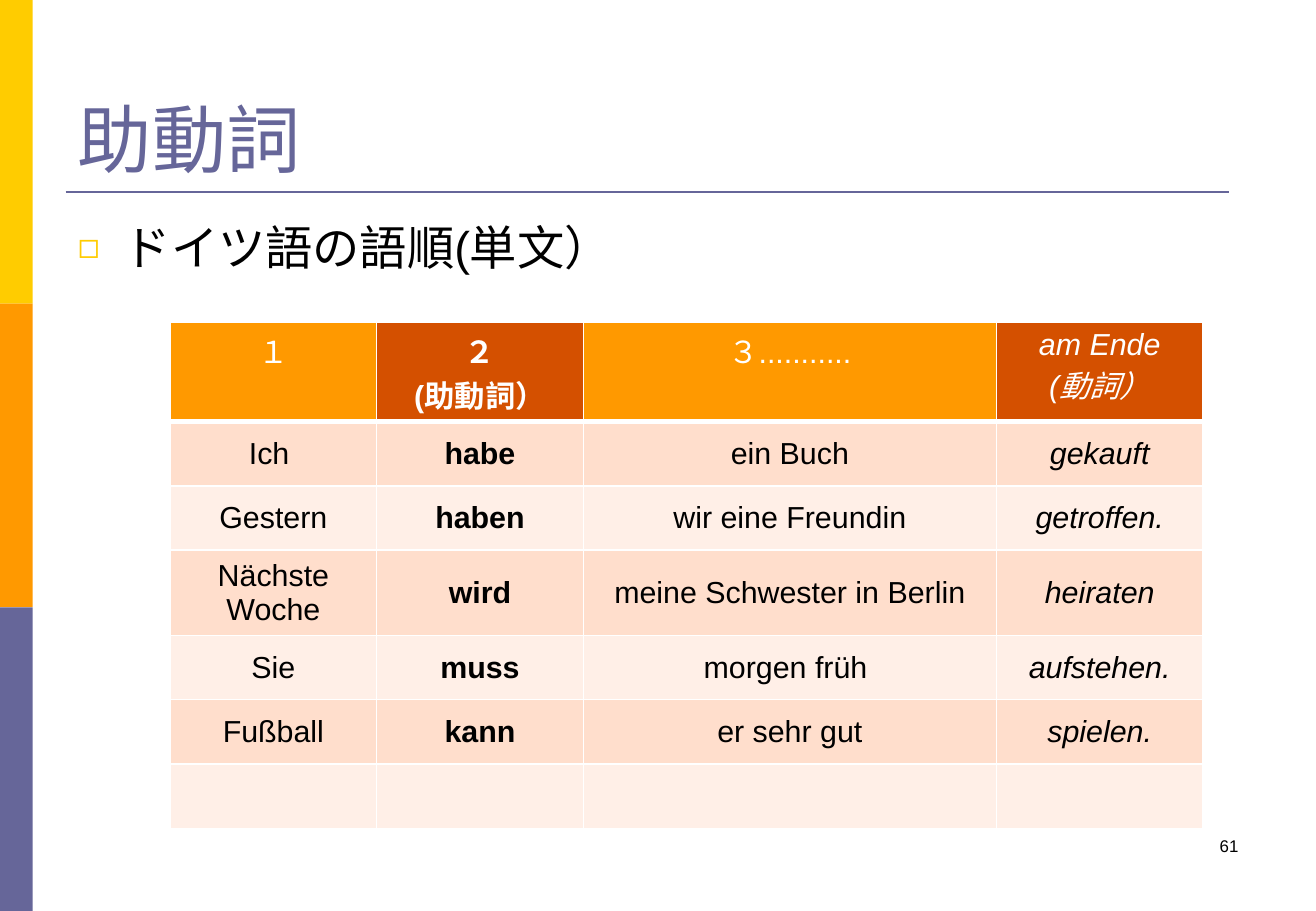
from lxml import etree
from pptx import Presentation
from pptx.dml.color import RGBColor
from pptx.enum.shapes import MSO_CONNECTOR, MSO_SHAPE
from pptx.enum.text import MSO_ANCHOR, MSO_AUTO_SIZE, PP_ALIGN
from pptx.oxml.ns import qn
from pptx.util import Inches, Pt

LEFT, CENTER, RIGHT = PP_ALIGN.LEFT, PP_ALIGN.CENTER, PP_ALIGN.RIGHT
TOP, MIDDLE, BOTTOM = MSO_ANCHOR.TOP, MSO_ANCHOR.MIDDLE, MSO_ANCHOR.BOTTOM
NO_AUTOFIT = MSO_AUTO_SIZE.NONE
RECTANGLE, STRAIGHT = MSO_SHAPE.RECTANGLE, MSO_CONNECTOR.STRAIGHT
FONT = "Arial"
COLORS = {
    "yellow": "FFCC00", "orange": "FF9900", "violet": "666699",
    "verb": "D45000", "band_dark": "FFDECC", "band_light": "FFEFE7",
    "white": "FFFFFF", "black": "000000",
}
HEADER = ["１", "２\n(助動詞）", "３...........", "am Ende\n(動詞）"]
SENTENCES = [
    ["Ich ", "habe", "ein Buch", "gekauft"],
    ["Gestern", "haben", "wir eine Freundin", "getroffen."],
    ["Nächste Woche", "wird", "meine Schwester in Berlin", "heiraten"],
    ["Sie", "muss", "morgen früh ", "aufstehen."],
    ["Fußball", "kann", "er sehr gut", "spielen."],
    ["", "", "", ""],
]
COLUMN_WIDTHS = [1.7, 1.7, 3.4, 1.7]
ROW_HEIGHTS = [0.82, 0.53, 0.53, 0.66, 0.53, 0.53, 0.53]
AUXILIARY, FINAL_VERB = 1, 3


def rgb(name):
    return RGBColor.from_string(COLORS[name])


def write_text(frame, text, size=18, color="black", align=LEFT, anchor=TOP,
               bold=False, italic=False):
    frame.word_wrap = True
    frame.vertical_anchor = anchor
    frame.text = text
    for paragraph in frame.paragraphs:
        paragraph.alignment = align
        for font in [paragraph.font] + [run.font for run in paragraph.runs]:
            font.name, font.size = FONT, Pt(size)
            font.bold, font.italic = bold, italic
            font.color.rgb = rgb(color)


def place(shape, box):
    shape.left, shape.top, shape.width, shape.height = map(Inches, box)


def add_side_bar(slide, box):
    left, top, width, height = box
    names = ["yellow", "orange", "violet"]
    part = height / len(names)
    for index, name in enumerate(names):
        stripe = slide.shapes.add_shape(
            RECTANGLE, Inches(left), Inches(top + index * part),
            Inches(width), Inches(part))
        stripe.shadow.inherit = False
        stripe.fill.solid()
        stripe.fill.fore_color.rgb = rgb(name)
        stripe.line.fill.background()


def add_title(slide, box):
    left, top, width, height = box
    title = slide.shapes.title
    place(title, box)
    write_text(title.text_frame, "助動詞", size=44, color="violet", anchor=BOTTOM)
    title.text_frame.auto_size = NO_AUTOFIT

    # Rule below the title
    rule_top = Inches(top + height + 0.03)
    rule = slide.shapes.add_connector(
        STRAIGHT, Inches(left), rule_top,
        Inches(left + width - 0.18), rule_top)
    rule.line.color.rgb = rgb("violet")
    rule.line.width = Pt(1.5)
    etree.SubElement(rule.element.spPr, qn("a:effectLst"))


def add_body(slide, box):
    body = slide.placeholders[1]
    place(body, box)
    write_text(body.text_frame, "ドイツ語の語順(単文）", size=28)
    body.text_frame.auto_size = NO_AUTOFIT

    # Hollow square bullet with a hanging indent
    properties = body.text_frame.paragraphs[0]._p.get_or_add_pPr()
    properties.set("marL", str(Inches(0.38)))
    properties.set("indent", str(-Inches(0.38)))
    bullet_color = etree.Element(qn("a:buClr"))
    etree.SubElement(bullet_color, qn("a:srgbClr"), val=COLORS["yellow"])
    bullet_parts = [
        bullet_color,
        etree.Element(qn("a:buSzPct"), val="75000"),
        etree.Element(qn("a:buFont"), typeface=FONT),
        etree.Element(qn("a:buChar"), char="◻"),
    ]
    for index, part in enumerate(bullet_parts):
        properties.insert(index, part)


def set_borders(cell, top=1, bottom=1):
    properties = cell._tc.get_or_add_tcPr()
    widths = {"a:lnL": 1, "a:lnR": 1, "a:lnT": top, "a:lnB": bottom}
    for index, (tag, width) in enumerate(widths.items()):
        border = etree.Element(qn(tag), w=str(Pt(width)))
        fill = etree.SubElement(border, qn("a:solidFill"))
        etree.SubElement(fill, qn("a:srgbClr"), val=COLORS["white"])
        properties.insert(index, border)


def add_word_order_table(slide, box):
    rows = [HEADER] + SENTENCES
    table = slide.shapes.add_table(
        len(rows), len(HEADER), *map(Inches, box)).table
    for column, width in zip(table.columns, COLUMN_WIDTHS):
        column.width = Inches(width)
    for row_index, texts in enumerate(rows):
        table.rows[row_index].height = Inches(ROW_HEIGHTS[row_index])
        is_header = row_index == 0
        for column_index, text in enumerate(texts):
            cell = table.cell(row_index, column_index)
            if is_header:
                is_verb = column_index in (AUXILIARY, FINAL_VERB)
                fill = "verb" if is_verb else "orange"
            else:
                fill = "band_dark" if row_index % 2 else "band_light"
            cell.fill.solid()
            cell.fill.fore_color.rgb = rgb(fill)
            write_text(cell.text_frame, text, align=CENTER,
                       color="white" if is_header else "black",
                       bold=column_index == AUXILIARY,
                       italic=column_index == FINAL_VERB)
            cell.vertical_anchor = TOP if is_header else MIDDLE
            set_borders(cell, top=3 if row_index == 1 else 1,
                        bottom=3 if is_header else 1)


def add_page_number(slide, box):
    number = slide.shapes.add_textbox(*map(Inches, box))
    write_text(number.text_frame, "61", size=10, align=RIGHT)


def main():
    presentation = Presentation()
    presentation.slide_width = Inches(10.83)
    presentation.slide_height = Inches(7.5)
    slide = presentation.slides.add_slide(presentation.slide_layouts[1])
    add_side_bar(slide, (0, 0, 0.27, 7.5))
    add_title(slide, (0.54, 0.3, 9.75, 1.25))
    add_body(slide, (0.54, 1.75, 9.75, 4.95))
    add_page_number(slide, (7.76, 6.83, 2.53, 0.5))
    add_word_order_table(
        slide, (1.4, 2.65, sum(COLUMN_WIDTHS), sum(ROW_HEIGHTS)))
    presentation.save("out.pptx")


if __name__ == "__main__":
    main()
